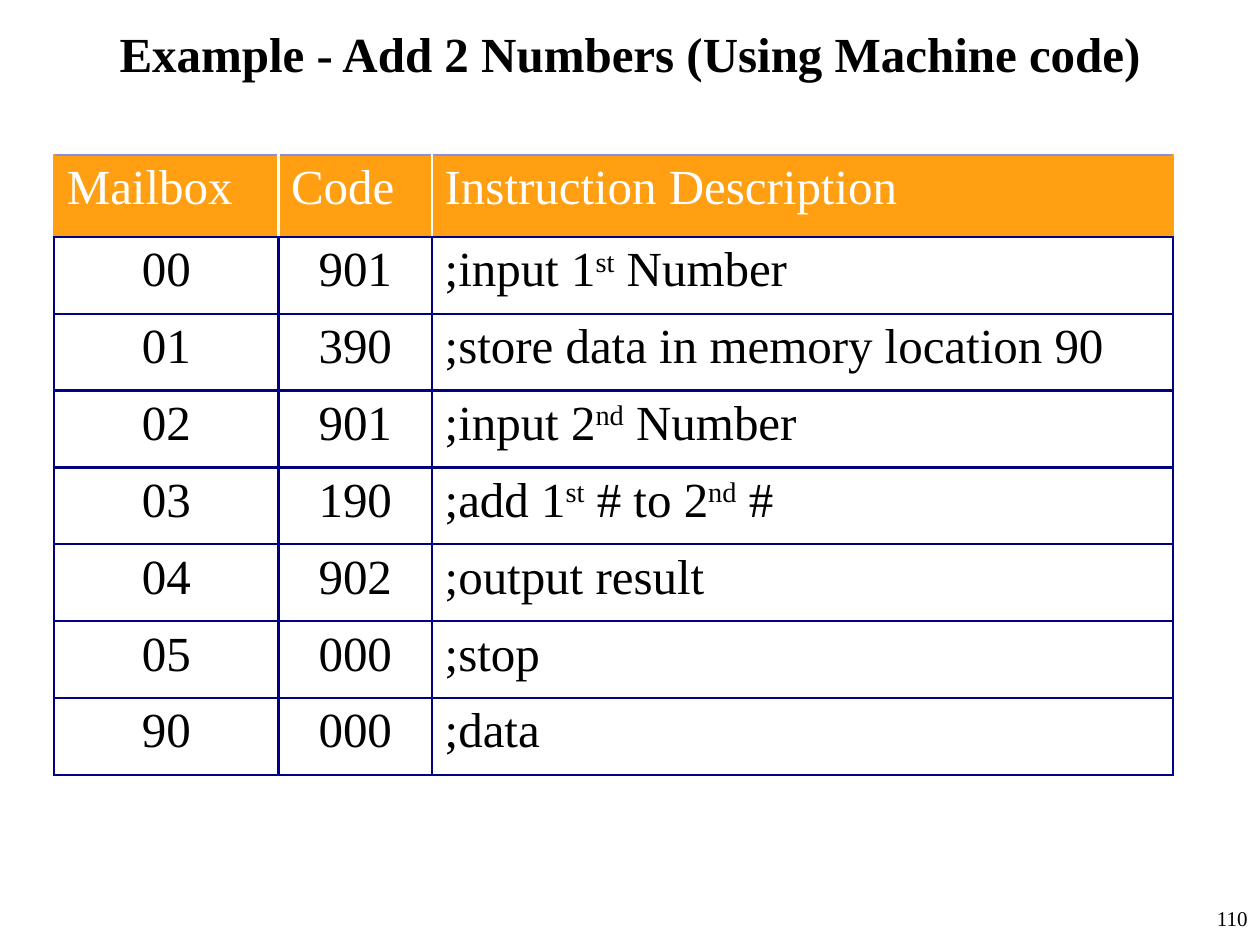
from pptx import Presentation, util as u
from pptx.dml.color import RGBColor
from pptx.enum import text
from pptx.oxml.ns import qn
from lxml import etree

BLACK = RGBColor(0, 0, 0)
WHITE = RGBColor(0xFF, 0xFF, 0xFF)
ORANGE = RGBColor(0xFF, 0x9F, 0x11)
NAVY = RGBColor(0, 0, 0x80)
LAVENDER = RGBColor(0x8C, 0x8C, 0xE2)

FONT = "Times New Roman"
LEFT, CENTER, RIGHT = text.PP_ALIGN.LEFT, text.PP_ALIGN.CENTER, text.PP_ALIGN.RIGHT

COLUMNS = [1.78, 1.22, 5.88]
HEADER_HEIGHT, ROW_HEIGHT = 0.65, 0.61
HEADER = ("Mailbox", "Code", "Instruction Description")
# Text between carets is superscript
PROGRAM = [
    ("00", "901", ";input 1^st^ Number"),
    ("01", "390", ";store data in memory location 90"),
    ("02", "901", ";input 2^nd^ Number"),
    ("03", "190", ";add 1^st^ # to 2^nd^ #"),
    ("04", "902", ";output result"),
    ("05", "000", ";stop"),
    ("90", "000", ";data"),
]


def write(tf, content, size=28, color=BLACK, bold=False, align=LEFT):
    p = tf.paragraphs[0]
    p.alignment = align
    for i, part in enumerate(content.split("^")):
        r = p.add_run()
        r.text = part
        f = r.font
        f.name, f.size, f.bold = FONT, u.Pt(size), bold
        f.color.rgb = color
        if i % 2:
            f._element.set("baseline", "30000")


def add_label(slide, box, content, anchor=text.MSO_ANCHOR.TOP, **style):
    sp = slide.shapes.add_textbox(*map(u.Inches, box))
    tf = sp.text_frame
    tf.word_wrap = True
    tf.vertical_anchor = anchor
    write(tf, content, **style)


def set_borders(cell, **sides):
    """Each side is (colour, width in points); sides come in order L, R, T, B."""
    tcPr = cell._tc.get_or_add_tcPr()
    for i, (side, (color, width)) in enumerate(sides.items()):
        ln = etree.Element(qn(f"a:ln{side}"), w=str(u.Pt(width)))
        fill = etree.SubElement(ln, qn("a:solidFill"))
        etree.SubElement(fill, qn("a:srgbClr"), val=str(color))
        tcPr.insert(i, ln)


def add_program_table(slide, left, top):
    rows = [HEADER] + PROGRAM
    height = HEADER_HEIGHT + ROW_HEIGHT * len(PROGRAM)
    box = map(u.Inches, (left, top, sum(COLUMNS), height))
    table = slide.shapes.add_table(len(rows), len(COLUMNS), *box).table
    table.horz_banding = table.first_row = False
    for column, width in zip(table.columns, COLUMNS):
        column.width = u.Inches(width)

    last = len(COLUMNS) - 1
    navy = (NAVY, 1.5)
    for i, row in enumerate(rows):
        header = i == 0
        table.rows[i].height = u.Inches(HEADER_HEIGHT if header else ROW_HEIGHT)
        for j, content in enumerate(row):
            cell = table.cell(i, j)
            cell.fill.solid()
            cell.fill.fore_color.rgb = ORANGE if header else WHITE
            if header:
                set_borders(cell,
                            L=(WHITE if j else ORANGE, 1.5),
                            R=(WHITE if j < last else ORANGE, 1.5),
                            T=(LAVENDER, 0.75), B=navy)
            else:
                set_borders(cell, L=navy, R=navy, T=navy, B=navy)
            write(cell.text_frame, content,
                  color=WHITE if header else BLACK,
                  align=LEFT if header or j == last else CENTER)


def main():
    prs = Presentation()
    prs.slide_width, prs.slide_height = u.Inches(10), u.Inches(7.5)
    slide = prs.slides.add_slide(prs.slide_layouts[6])

    # Page number, title, program listing
    add_label(slide, (7.92, 7.14, 2.08, 0.36), "110", size=12, align=RIGHT)
    add_label(slide, (0, 0, 10, 0.84), "Example - Add 2 Numbers (Using Machine code)",
              anchor=text.MSO_ANCHOR.MIDDLE, bold=True, align=CENTER)
    add_program_table(slide, 0.43, 1.23)

    prs.save("out.pptx")


if __name__ == "__main__":
    main()
